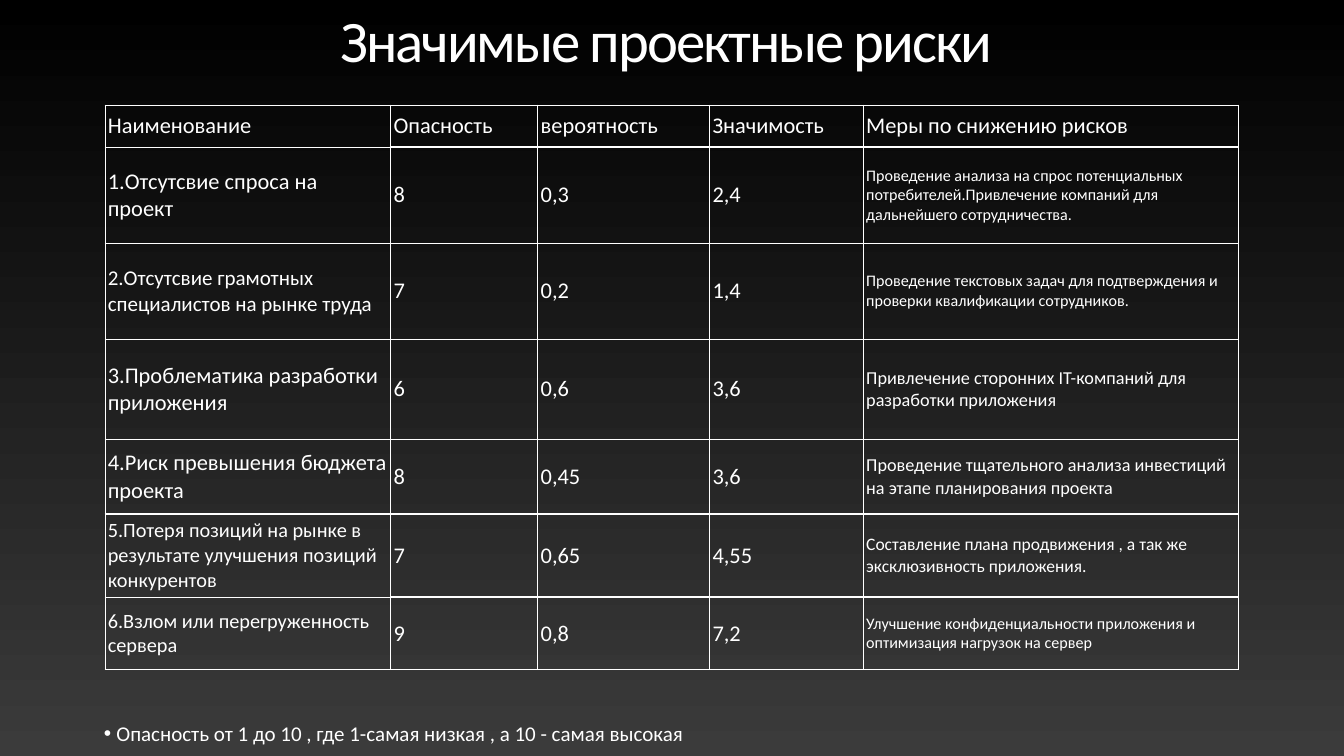
from lxml import etree
from pptx import Presentation
from pptx import util as u
from pptx.dml.color import RGBColor
from pptx.enum import text
from pptx.oxml.ns import qn

WHITE = "FFFFFF"
INSET = 0.06
COLUMNS = [5.67, 2.92, 3.41, 3.05, 7.45]
ROW_HEIGHTS = [0.84, 1.91, 1.9, 1.99, 1.48, 1.65, 1.44]
HEADER = ["Наименование", "Опасность", "вероятность", "Значимость", "Меры по снижению рисков"]
RISKS = [
    (32, "1.Отсутсвие спроса на проект", "8", "0,3", "2,4", 23,
     "Проведение анализа на спрос потенциальных потребителей.Привлечение компаний для дальнейшего сотрудничества."),
    (30, "2.Отсутсвие грамотных специалистов на рынке труда", "7", "0,2", "1,4", 23,
     "Проведение текстовых задач для подтверждения и проверки квалификации сотрудников."),
    (32, "3.Проблематика разработки приложения", "6", "0,6", "3,6", 26,
     "Привлечение сторонних IT-компаний для разработки приложения"),
    (32, "4.Риск превышения бюджета проекта", "8", "0,45", "3,6", 26,
     "Проведение тщательного анализа инвестиций на этапе планирования проекта"),
    (29, "5.Потеря позиций на рынке в результате улучшения позиций конкурентов", "7", "0,65", "4,55", 25,
     "Составление плана продвижения , а так же эксклюзивность приложения."),
    (29, "6.Взлом или перегруженность сервера", "9", "0,8", "7,2", 23,
     "Улучшение конфиденциальности приложения и оптимизация нагрузок на сервер"),
]


def rgb(value):
    return RGBColor.from_string(value)


def apply(target, values):
    for name, value in values.items():
        setattr(target, name, value)


def insets(prefix):
    return {f"{prefix}{side}": u.Inches(INSET) for side in ("left", "top", "right", "bottom")}


def place(shape, box):
    apply(shape, dict(zip(("left", "top", "width", "height"), map(u.Inches, box))))


def shade(fill, start, end):
    fill.gradient()
    fill.gradient_angle = 270
    for stop, position, colour in zip(fill.gradient_stops, (0, 1), (start, end)):
        stop.position = position
        stop.color.rgb = rgb(colour)


def write(paragraph, words, size):
    run = paragraph.add_run()
    run.text = words
    apply(run.font, {"name": "Calibri", "size": u.Pt(size), "bold": False})
    run.font.color.rgb = rgb(WHITE)
    return run


def draw_title(title, box):
    place(title, box)
    frame = title.text_frame
    apply(frame, {"auto_size": text.MSO_AUTO_SIZE.NONE, "word_wrap": True,
                  "vertical_anchor": text.MSO_ANCHOR.BOTTOM, **insets("margin_")})
    heading = frame.paragraphs[0]
    apply(heading, {"alignment": text.PP_ALIGN.CENTER, "line_spacing": 0.8})
    run = write(heading, "Значимые проектные риски ", 84)
    shade(run.font.fill, WHITE, "929292")
    run.font._element.set("spc", "-300")


def draw_borders(cell, widths):
    properties = cell._tc.get_or_add_tcPr()
    for index, (side, width) in enumerate(zip("LRTB", widths)):
        line = etree.Element(qn(f"a:ln{side}"), w=str(u.Pt(width)))
        fill = etree.SubElement(line, qn("a:solidFill"))
        etree.SubElement(fill, qn("a:srgbClr"), val=WHITE)
        properties.insert(index, line)


def border_widths(row, column):
    def below(upper):
        thick = upper == 4 or (upper in (0, 5) and column > 0)
        return 3 if thick else 1

    def beside(left):
        return 3 if left == 0 and row < 5 else 1

    return beside(column - 1), beside(column), below(row - 1), below(row)


def draw_risks(slide, box):
    rows = [[(label, 32) for label in HEADER]]
    for name_size, name, danger, chance, weight, remedy_size, remedy in RISKS:
        rows.append([(name, name_size), (danger, 32), (chance, 32), (weight, 32), (remedy, remedy_size)])
    table = slide.shapes.add_table(len(rows), len(COLUMNS), *map(u.Inches, box)).table
    apply(table, {"first_row": False, "horz_banding": False})
    for column, width in zip(table.columns, COLUMNS):
        column.width = u.Inches(width)
    for r, (entries, height) in enumerate(zip(rows, ROW_HEIGHTS)):
        table.rows[r].height = u.Inches(height)
        for c, (words, size) in enumerate(entries):
            cell = table.cell(r, c)
            apply(cell, {"vertical_anchor": text.MSO_ANCHOR.MIDDLE, **insets("margin_")})
            cell.fill.background()
            draw_borders(cell, border_widths(r, c))
            write(cell.text_frame.paragraphs[0], words, size)


def draw_note(slide, box):
    frame = slide.shapes.add_textbox(*map(u.Inches, box)).text_frame
    apply(frame, {"word_wrap": True, **insets("margin_")})
    note = frame.paragraphs[0]
    note.space_before = u.Pt(24)
    write(note, "Опасность от 1 до 10 , где 1-самая низкая , а 10 - самая высокая", 30)
    properties = note._p.get_or_add_pPr()
    properties.set("marL", str(u.Inches(0.86)))
    properties.set("indent", str(u.Inches(-0.25)))
    colour = etree.SubElement(properties, qn("a:buClr"))
    etree.SubElement(colour, qn("a:srgbClr"), val=WHITE)
    etree.SubElement(properties, qn("a:buFont"), typeface="Arial")
    etree.SubElement(properties, qn("a:buChar"), char="•")


def main():
    deck = Presentation()
    apply(deck, {"slide_width": u.Inches(26.67), "slide_height": u.Inches(15)})
    slide = deck.slides.add_slide(deck.slide_layouts[5])
    shade(slide.background.fill, "000000", "3B3B3B")
    draw_title(slide.shapes.title, (1.39, -0.17, 23.89, 1.7))
    draw_note(slide, (1.39, 14.24, 23.89, 0.72))
    draw_risks(slide, (2.08, 2.08, sum(COLUMNS), sum(ROW_HEIGHTS)))
    deck.save("out.pptx")


if __name__ == "__main__":
    main()
